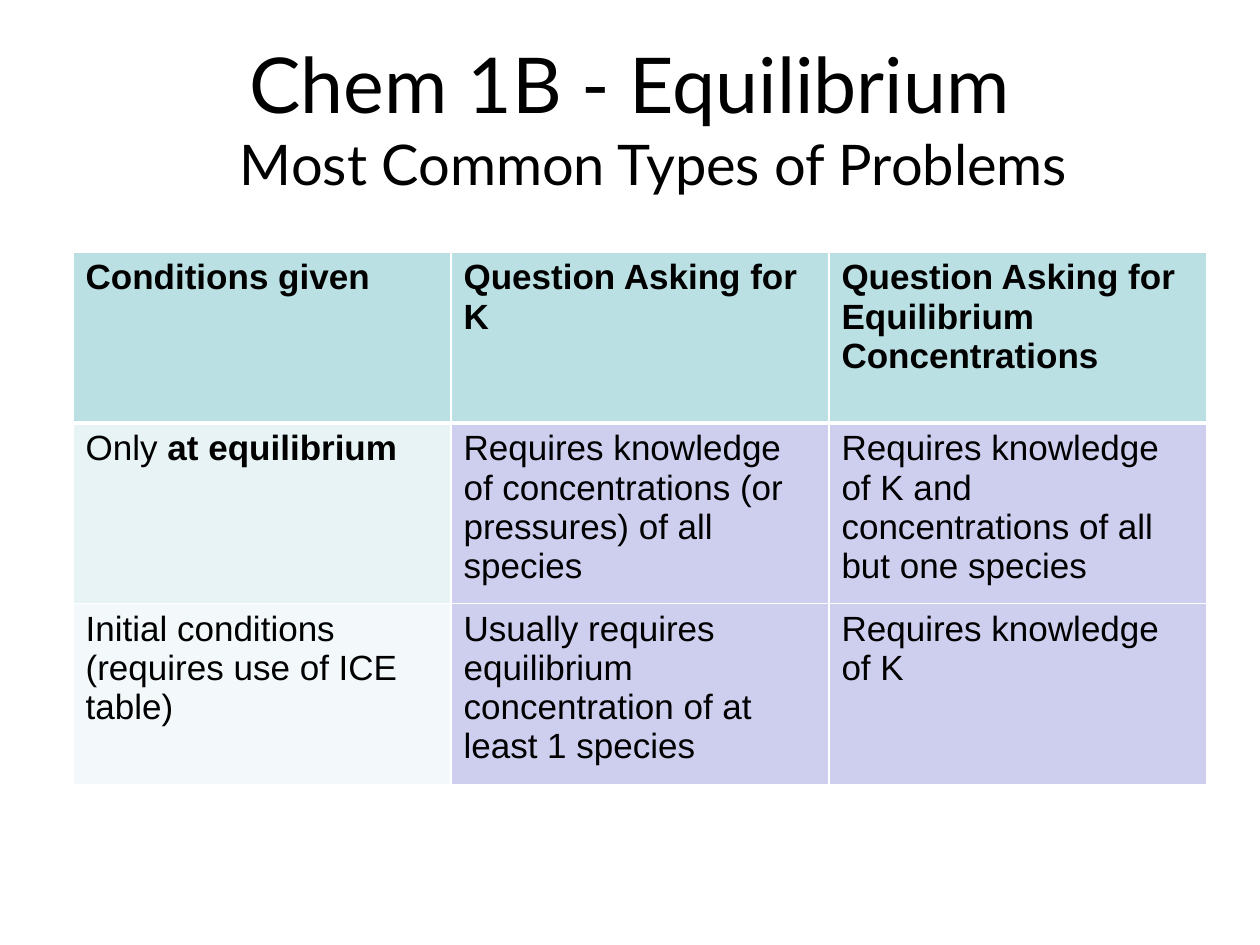
import pptx
import pptx.util
import pptx.dml.color
import pptx.enum.text
import pptx.oxml

SCALE = 914400 // 126
COLORS = {
    "ink": "000000",
    "border": "FFFFFF",
    "header": "BBE0E3",
    "first": "E7F3F4",
    "second": "F3F9FA",
    "answer": "CECEEF",
}
ROWS = [
    [("Conditions given", "header"),
     ("Question Asking for K", "header"),
     ("Question Asking for Equilibrium Concentrations", "header")],
    [("Only |at equilibrium", "first"),
     ("Requires knowledge of concentrations (or pressures) of all species", "answer"),
     ("Requires knowledge of K and concentrations of all but one species", "answer")],
    [("Initial conditions (requires use of ICE table)", "second"),
     ("Usually requires equilibrium concentration of at least 1 species", "answer"),
     ("Requires knowledge of K", "answer")],
]


def px(length):
    return pptx.util.Emu(length * SCALE)


def color(name):
    return pptx.dml.color.RGBColor.from_string(COLORS[name])


class Slide:
    def __init__(self, deck):
        self.page = deck.slides.add_slide(deck.slide_layouts[6])
        self.title_font = "Lato"
        self.body_font = "Arial"

    def style(self, span, font, size, bold=False):
        span.font.name = font
        span.font.size = pptx.util.Pt(size)
        span.font.bold = bold
        span.font.color.rgb = color("ink")

    def title(self, left, top, width, height, lines, sizes):
        box = self.page.shapes.add_textbox(px(left), px(top), px(width), px(height))
        frame = box.text_frame
        frame.word_wrap = True
        frame.vertical_anchor = pptx.enum.text.MSO_ANCHOR.MIDDLE
        para = frame.paragraphs[0]
        para.text = "\v".join(lines)
        para.alignment = pptx.enum.text.PP_ALIGN.CENTER
        properties = para._p.get_or_add_pPr()
        properties.set("marL", str(px(48)))
        properties.set("indent", str(-px(48)))
        for span, size in zip(para.runs, sizes):
            self.style(span, self.title_font, size)

    def borders(self, cell, bottom):
        properties = cell._tc.get_or_add_tcPr()
        for index, side in enumerate("LRTB"):
            width = pptx.util.Pt(bottom if side == "B" else 1)
            properties.insert(index, pptx.oxml.parse_xml(
                '<a:ln%s xmlns:a="http://schemas.openxmlformats.org/drawingml/2006/main" w="%d">'
                '<a:solidFill><a:srgbClr val="%s"/></a:solidFill></a:ln%s>'
                % (side, width, COLORS["border"], side)))

    def table(self, left, top, column_width, row_height, rows):
        count = len(rows[0])
        table = self.page.shapes.add_table(
            len(rows), count, px(left), px(top),
            px(column_width * count), px(row_height * len(rows))).table
        for column in table.columns:
            column.width = px(column_width)
        for row_index, row in enumerate(rows):
            table.rows[row_index].height = px(row_height)
            for column_index, (text, fill) in enumerate(row):
                cell = table.cell(row_index, column_index)
                cell.fill.solid()
                cell.fill.fore_color.rgb = color(fill)
                para = cell.text_frame.paragraphs[0]
                for part_index, part in enumerate(text.split("|")):
                    span = para.add_run()
                    span.text = part
                    self.style(span, self.body_font, 20, row_index == 0 or part_index == 1)
                self.borders(cell, 3 if row_index < 2 and fill == "header" else 1)
                if row_index == 1:
                    top_line = cell._tc.tcPr[2]
                    top_line.set("w", str(pptx.util.Pt(3)))


def main():
    deck = pptx.Presentation()
    deck.slide_width = pptx.util.Inches(10)
    deck.slide_height = pptx.util.Inches(7.5)
    slide = Slide(deck)
    slide.title(63, 38, 1134, 157,
                ["Chem 1B - Equilibrium", "Most Common Types of Problems"], [44, 32])
    slide.table(73, 252, 378, 171, ROWS)
    deck.save("out.pptx")


if __name__ == "__main__":
    main()
